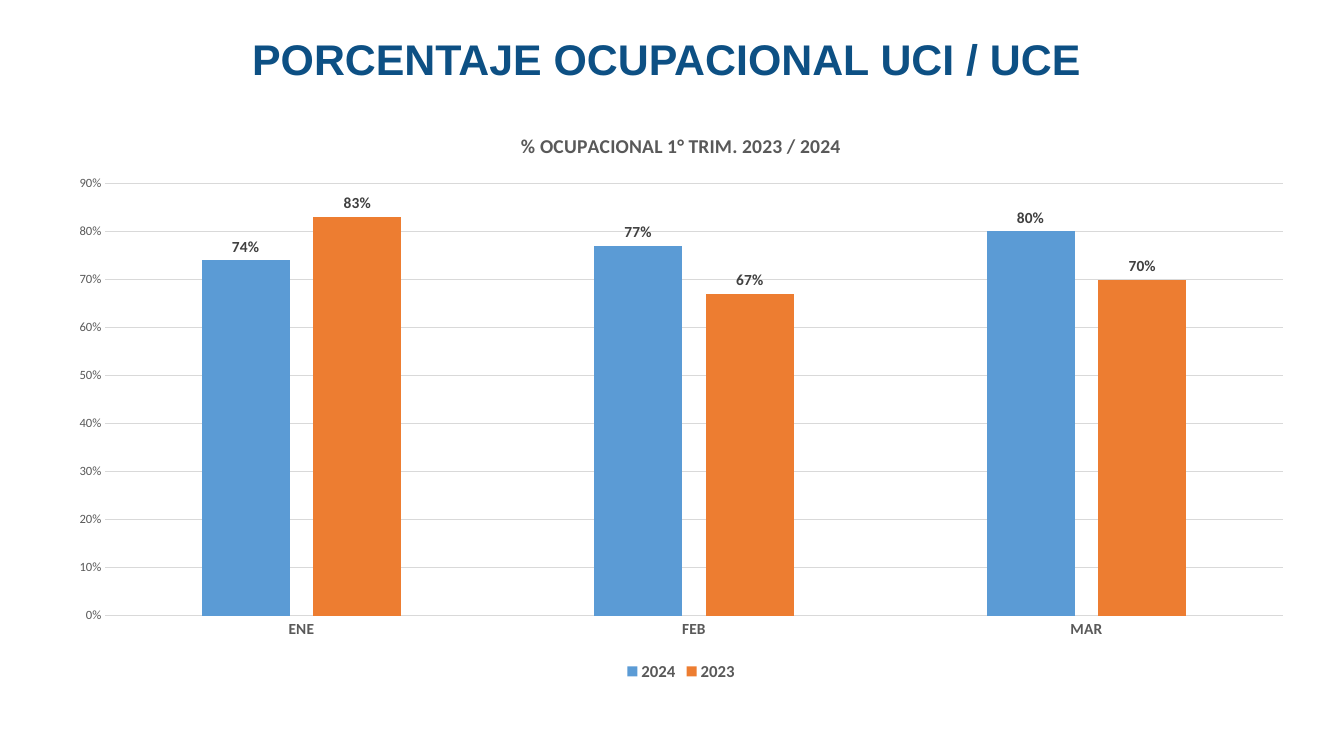
from dataclasses import dataclass

from pptx import Presentation
from pptx.chart.data import CategoryChartData
from pptx.dml.color import RGBColor
from pptx.enum.chart import XL_CHART_TYPE, XL_LABEL_POSITION, XL_LEGEND_POSITION, XL_TICK_MARK
from pptx.enum.text import MSO_ANCHOR, MSO_AUTO_SIZE, PP_ALIGN
from pptx.util import Inches, Pt

COLUMNS = XL_CHART_TYPE.COLUMN_CLUSTERED
OUTSIDE = XL_LABEL_POSITION.OUTSIDE_END
BOTTOM = XL_LEGEND_POSITION.BOTTOM
NO_TICK = XL_TICK_MARK.NONE
MIDDLE = MSO_ANCHOR.MIDDLE
NO_FIT = MSO_AUTO_SIZE.NONE
CENTER = PP_ALIGN.CENTER

WIDTH, HEIGHT = Inches(13.33), Inches(7.5)
NAVY, GRAY, DARK, RULE = "0D5084", "595959", "404040", "D9D9D9"
PERCENT = "0%"
MONTHS = ("ENE", "FEB", "MAR")


@dataclass(frozen=True)
class Area:
    """A box in percent of the slide's width and height."""
    left: float
    top: float
    width: float
    height: float

    def box(self) -> tuple[int, int, int, int]:
        return (int(WIDTH * self.left / 100), int(HEIGHT * self.top / 100),
                int(WIDTH * self.width / 100), int(HEIGHT * self.height / 100))


@dataclass(frozen=True)
class Year:
    name: str
    rates: tuple[float, ...]
    color: str


HEAD = Area(5.4, 5.33, 88.37, 6.53)
PLOT = Area(4.05, 14.8, 93.25, 75.87)
YEARS = (Year("2024", (0.74, 0.77, 0.8), "5B9BD5"),
         Year("2023", (0.83, 0.67, 0.7), "ED7D31"))


def rgb(code: str) -> RGBColor:
    return RGBColor.from_string(code)


def apply(item, values: dict) -> None:
    for key, value in values.items():
        setattr(item, key, value)


def style(font, size: float, color: str, bold: bool = True, name: str = "Calibri") -> None:
    apply(font, {"size": Pt(size), "bold": bold, "name": name})
    font.color.rgb = rgb(color)


def rule(line) -> None:
    line.color.rgb = rgb(RULE)
    line.width = Pt(0.75)


def add_title(slide, text: str) -> None:
    title = slide.shapes.title
    apply(title, dict(zip(("left", "top", "width", "height"), HEAD.box())))
    frame = title.text_frame
    frame.text = text
    apply(frame, {"word_wrap": True, "auto_size": NO_FIT, "vertical_anchor": MIDDLE,
                  "margin_left": Inches(0.1), "margin_right": Inches(0.1),
                  "margin_top": Inches(0.05), "margin_bottom": Inches(0.05)})
    line = frame.paragraphs[0]
    apply(line, {"alignment": CENTER, "line_spacing": 0.7})
    style(line.runs[0].font, 30.6, NAVY, name="Arial")


def format_axes(chart) -> None:
    months, rates = chart.category_axis, chart.value_axis
    for axis, size, bold in ((months, 11, True), (rates, 9, False)):
        apply(axis, {"major_tick_mark": NO_TICK, "minor_tick_mark": NO_TICK})
        style(axis.tick_labels.font, size, GRAY, bold)
    months.has_major_gridlines = False
    rule(months.format.line)
    apply(rates, {"minimum_scale": 0, "maximum_scale": 0.9, "major_unit": 0.1,
                  "has_major_gridlines": True})
    rule(rates.major_gridlines.format.line)
    rates.format.line.fill.background()
    apply(rates.tick_labels, {"number_format": PERCENT, "number_format_is_linked": False})


def format_bars(plot) -> None:
    apply(plot, {"gap_width": 219, "overlap": -27, "vary_by_categories": False})
    for bars, year in zip(plot.series, YEARS):
        bars.invert_if_negative = False
        bars.format.fill.solid()
        bars.format.fill.fore_color.rgb = rgb(year.color)
        labels = bars.data_labels
        apply(labels, {"show_value": True, "number_format": PERCENT,
                       "number_format_is_linked": False, "position": OUTSIDE})
        style(labels.font, 11, DARK)


def add_rates(slide, text: str) -> None:
    data = CategoryChartData(number_format=PERCENT)
    data.categories = MONTHS
    for year in YEARS:
        data.add_series(year.name, year.rates)
    chart = slide.shapes.add_chart(COLUMNS, *PLOT.box(), data).chart
    style(chart.font, 10, "000000", bold=False)
    apply(chart, {"has_title": True, "has_legend": True})
    frame = chart.chart_title.text_frame
    frame.text = text
    style(frame.paragraphs[0].runs[0].font, 14, GRAY)
    chart.chart_title.include_in_layout = False
    apply(chart.legend, {"position": BOTTOM, "include_in_layout": False})
    style(chart.legend.font, 12, GRAY)
    format_axes(chart)
    format_bars(chart.plots[0])


def main() -> None:
    deck = Presentation()
    apply(deck, {"slide_width": WIDTH, "slide_height": HEIGHT})
    slide = deck.slides.add_slide(deck.slide_layouts[5])
    add_title(slide, "PORCENTAJE OCUPACIONAL UCI / UCE")
    add_rates(slide, "% OCUPACIONAL 1° TRIM. 2023 / 2024")
    deck.save("out.pptx")


if __name__ == "__main__":
    main()
